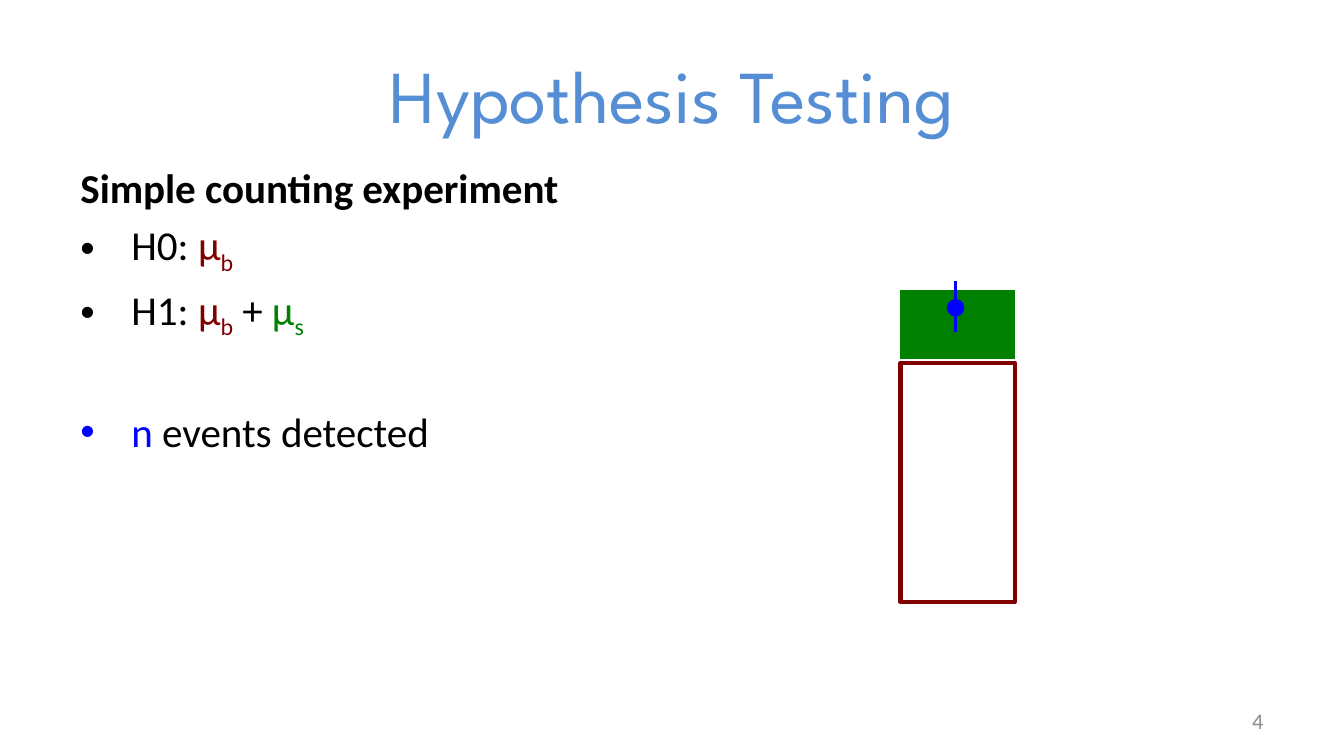
from pptx import Presentation
from pptx.dml.color import RGBColor
from pptx.enum.shapes import MSO_CONNECTOR, MSO_SHAPE
from pptx.enum.text import MSO_ANCHOR, MSO_AUTO_SIZE, PP_ALIGN
from pptx.oxml.ns import qn
from pptx.util import Inches, Pt
from lxml import etree

BLACK = RGBColor(0x00, 0x00, 0x00)
MAROON = RGBColor(0x80, 0x00, 0x00)
GREEN = RGBColor(0x00, 0x80, 0x00)
BLUE = RGBColor(0x00, 0x00, 0xFF)
TITLE_BLUE = RGBColor(0x55, 0x8E, 0xD5)
GREY = RGBColor(0x8C, 0x8C, 0x8C)

BACKGROUND = [("μ", MAROON, False), ("b", MAROON, True)]
SIGNAL = [("μ", GREEN, False), ("s", GREEN, True)]
BULLETS = [
    (4.4, [("H0: ", BLACK, False), *BACKGROUND]),
    (4.4, [("H1: ", BLACK, False), *BACKGROUND, (" + ", BLACK, False), *SIGNAL]),
    (35.5, [("n", BLUE, False), (" events detected", BLACK, False)]),
]


def style(r, size, color, name="Calibri", bold=False):
    r.font.size = Pt(size)
    r.font.color.rgb = color
    r.font.name = name
    r.font.bold = bold


def add_bullet(p):
    pPr = p._p.get_or_add_pPr()
    pPr.set("marL", str(Inches(0.38)))
    pPr.set("indent", str(-Inches(0.38)))
    etree.SubElement(pPr, qn("a:buFont")).set("typeface", "Arial")
    etree.SubElement(pPr, qn("a:buChar")).set("char", "•")


def add_title(s, x, y, w, h):
    sp = s.shapes.title
    sp.left, sp.top, sp.width, sp.height = map(Inches, (x, y, w, h))
    tf = sp.text_frame
    tf.text = "Hypothesis Testing"
    tf.auto_size = MSO_AUTO_SIZE.NONE
    tf.vertical_anchor = MSO_ANCHOR.MIDDLE
    p = tf.paragraphs[0]
    p.alignment = PP_ALIGN.CENTER
    style(p.runs[0], 40, TITLE_BLUE, "League Spartan")


def add_hypotheses(s, x, y, w, h):
    tf = s.shapes.add_textbox(*map(Inches, (x, y, w, h))).text_frame
    tf.word_wrap = True
    p = tf.paragraphs[0]
    p.text = "Simple counting experiment"
    p.space_before = Pt(4.4)
    style(p.runs[0], 22, BLACK, bold=True)
    for gap, parts in BULLETS:
        p = tf.add_paragraph()
        p.space_before = Pt(gap)
        add_bullet(p)
        for text, color, subscript in parts:
            r = p.add_run()
            r.text = text
            style(r, 22, color)
            if subscript:
                r.font._element.set("baseline", "-25000")


def add_block(shapes, kind, x, y, w, h, line, width, fill=None):
    sp = shapes.add_shape(kind, *map(Inches, (x, y, w, h)))
    sp.shadow.inherit = False
    if fill is None:
        sp.fill.background()
    else:
        sp.fill.solid()
        sp.fill.fore_color.rgb = fill
    sp.line.color.rgb = line
    sp.line.width = Pt(width)


def add_data_point(s, x, y, h):
    shapes = s.shapes.add_group_shape().shapes
    add_block(shapes, MSO_SHAPE.OVAL, x - 0.06, y + 0.14, 0.12, 0.12, BLUE, 0.75, BLUE)
    bar = shapes.add_connector(
        MSO_CONNECTOR.STRAIGHT, Inches(x), Inches(y), Inches(x), Inches(y + h))
    bar.line.color.rgb = BLUE
    bar.line.width = Pt(2)
    etree.SubElement(bar._element.spPr, qn("a:effectLst"))


def add_count_bar(s, x, y, w):
    add_block(s.shapes, MSO_SHAPE.RECTANGLE, x, y + 0.54, w, 1.78, MAROON, 2.25)
    add_block(s.shapes, MSO_SHAPE.RECTANGLE, x, y, w, 0.51, GREEN, 0.75, GREEN)
    add_data_point(s, x + 0.41, y - 0.07, 0.38)


def add_page_number(s, x, y, w, h):
    tf = s.shapes.add_textbox(*map(Inches, (x, y, w, h))).text_frame
    tf.word_wrap = True
    tf.text = "4"
    tf.vertical_anchor = MSO_ANCHOR.MIDDLE
    p = tf.paragraphs[0]
    p.alignment = PP_ALIGN.RIGHT
    style(p.runs[0], 12, GREY)


def main():
    prs = Presentation()
    prs.slide_width = Inches(10)
    prs.slide_height = prs.slide_width * 9 // 16
    s = prs.slides.add_slide(prs.slide_layouts[5])
    add_title(s, 0.5, 0.23, 9, 0.94)
    add_page_number(s, 7.17, 5.21, 2.33, 0.3)
    add_hypotheses(s, 0.5, 1.16, 4.5, 3.83)
    add_count_bar(s, 6.7, 2.16, 0.85)
    prs.save("out.pptx")


if __name__ == "__main__":
    main()
